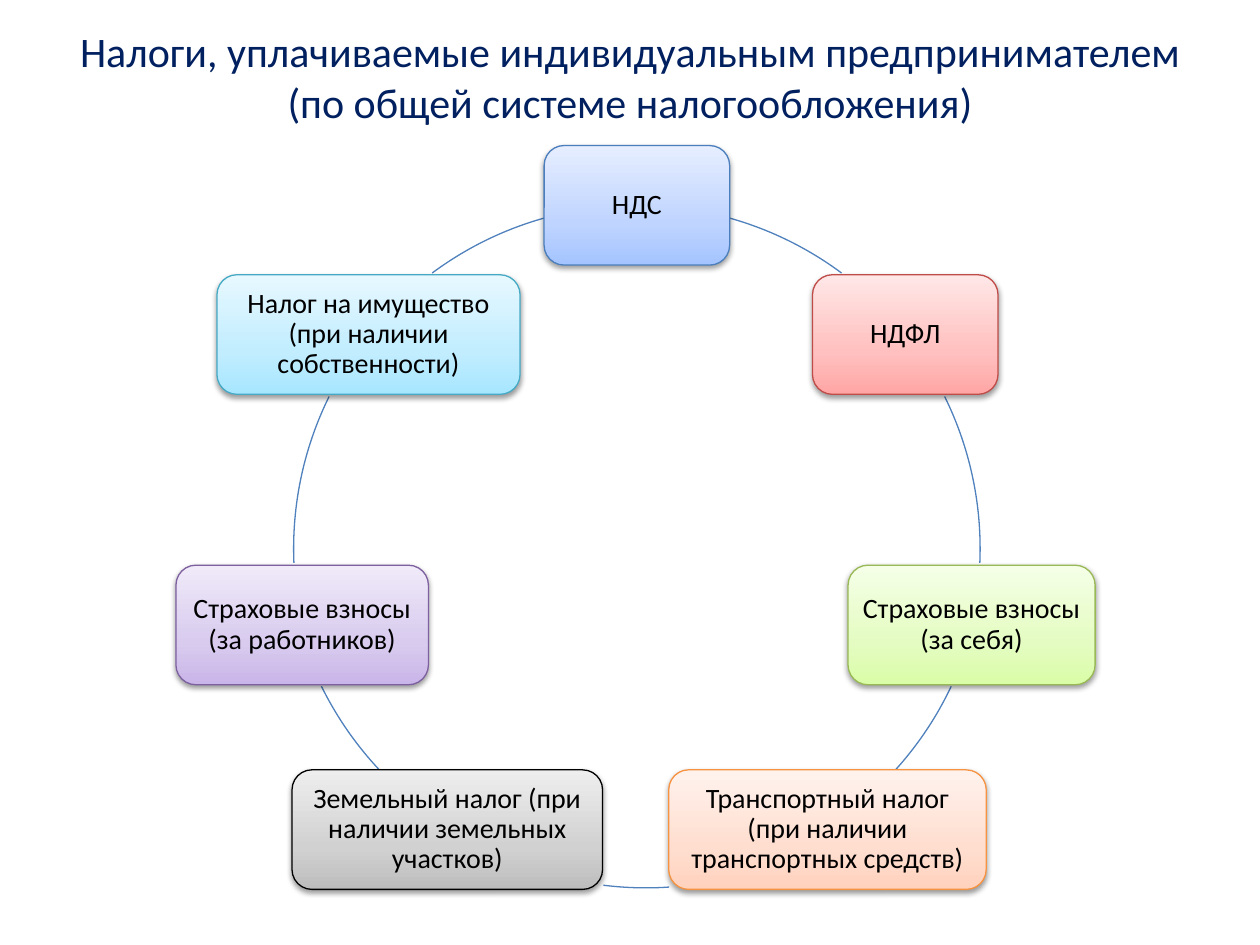
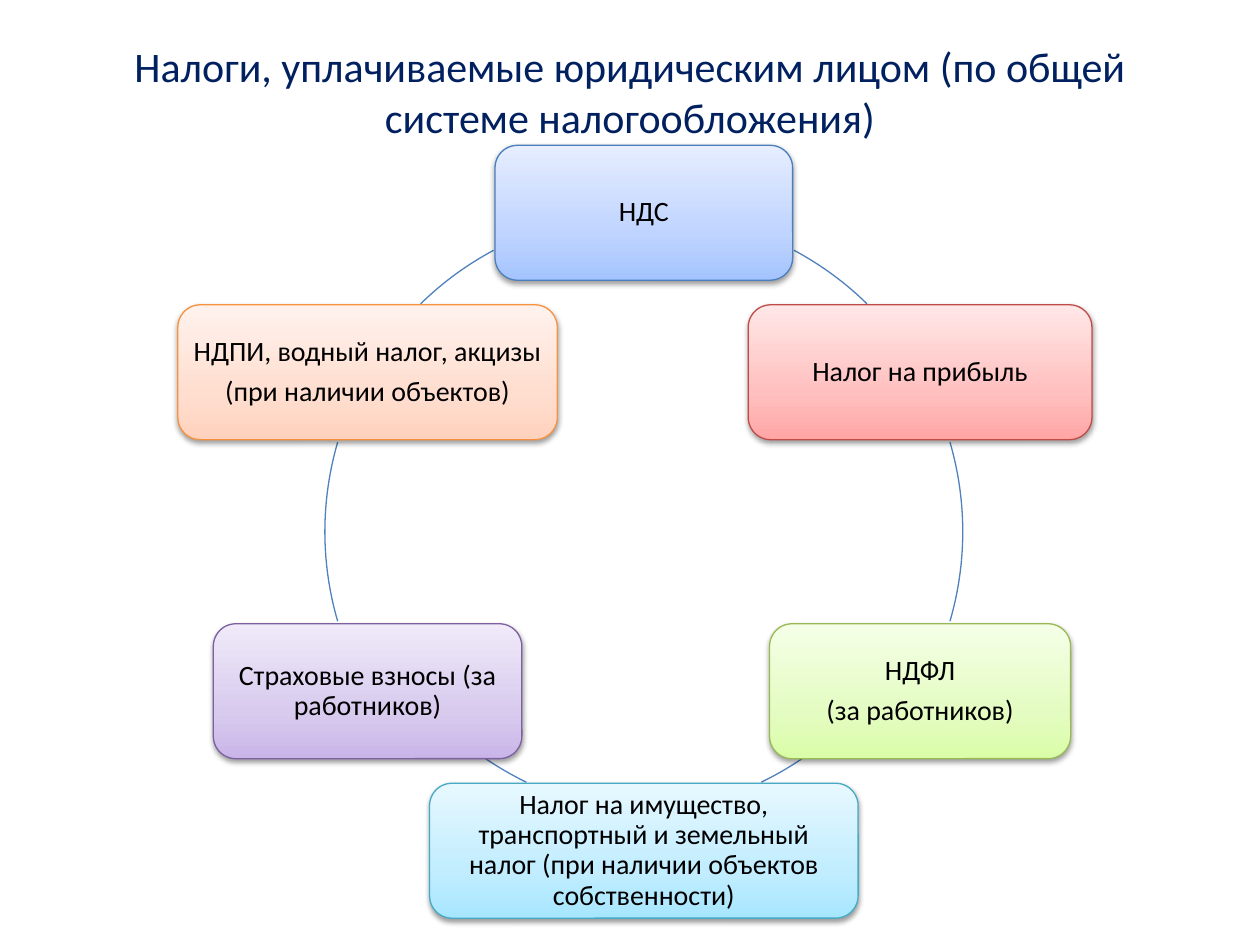
"""Build two slides that show the taxes of a sole trader and of a company as rings."""
from copy import deepcopy
from math import cos, radians, sin

from pptx import Presentation
from pptx.dml.color import RGBColor
from pptx.enum.shapes import MSO_SHAPE
from pptx.enum.text import MSO_ANCHOR, MSO_AUTO_SIZE, PP_ALIGN
from pptx.oxml import parse_xml
from pptx.oxml.ns import nsdecls, qn
from pptx.util import Cm, Pt

theme = {
    "font": "Calibri",
    "head": {"size": 24, "color": "002060"},
    "body": {"size": 16, "color": "000000"},
    "ring": "4F81BD",
    "line": 0.75,
    "blue": ("4B7EBC", "A4C4FF", "BFD4FF", "E6EEFF"),
    "red": ("BF4C48", "FFA6A5", "FFC0BF", "FFE7E7"),
    "green": ("98B955", "DAFDA7", "E4FCC2", "F5FFE7"),
    "orange": ("F69240", "FFD2BD", "FFDED0", "FFF2ED"),
    "gray": ("000000", "BDBDBD", "D1D1D1", "EEEEEE"),
    "violet": ("7D60A0", "C9B5E8", "D8CBEE", "F0EAF9"),
    "aqua": ("46AAC5", "A7E6FF", "C1EDFF", "E7F8FF"),
}
shade = (
    f'<a:outerShdw {nsdecls("a")} blurRad="40000" dist="20000" dir="5400000" '
    'rotWithShape="0"><a:srgbClr val="000000"><a:alpha val="38000"/></a:srgbClr></a:outerShdw>'
)

slides = [
    {
        "title": "Налоги, уплачиваемые индивидуальным предпринимателем "
                 "(по общей системе налогообложения)",
        "depth": 1.55, "mid": (12.84, 11.06), "radius": 6.92, "height": 2.41,
        "taxes": [
            ("НДС", "blue", 3.74, 0, 0),
            ("НДФЛ", "red", 3.74, 0, 0),
            ("Страховые взносы (за себя)", "green", 4.98, 0, 0),
            ("Транспортный налог (при наличии транспортных средств)", "orange", 6.4, 0.84, -0.57),
            ("Земельный налог (при наличии земельных участков)", "gray", 6.26, -0.82, -0.57),
            ("Страховые взносы (за работников)", "violet", 5.09, 0, 0),
            ("Налог на имущество (при наличии собственности)", "aqua", 6.11, 0, 0),
        ],
        "arcs": [
            (285.7, 306.6, 0, 0),
            (333.7, 2.4, 0, 0),
            (25.3, 42, 0.08, -0.18),
            (86.1, 97.1, 0.18, -0.08),
            (136.8, 153.8, -0.15, -0.28),
            (177.6, 206.3, 0, 0),
            (233.4, 254.3, 0, 0),
        ],
    },
    {
        "title": "Налоги, уплачиваемые юридическим лицом (по общей системе налогообложения)",
        "depth": 2.16, "mid": (12.98, 10.72), "radius": 6.43, "height": 2.72,
        "taxes": [
            ("НДС", "blue", 6, 0, 0),
            ("Налог на прибыль", "red", 6.93, 0, 0),
            ("НДФЛ\n(за работников)", "green", 6.07, 0, 0),
            ("Налог на имущество, транспортный и земельный налог "
             "(при наличии объектов собственности)", "aqua", 8.64, 0, 0),
            ("Страховые взносы (за работников)", "violet", 6.22, 0, 0),
            ("НДПИ, водный налог, акцизы\n(при наличии объектов)", "orange", 7.65, 0, 0),
        ],
        "arcs": [
            (298.1, 314.4, 0, 0),
            (343.7, 16.3, 0, 0),
            (55.7, 64.2, -0.43, -0.74),
            (115.8, 124.3, 0.43, -0.74),
            (163.7, 196.3, 0, 0),
            (225.6, 241.9, 0, 0),
        ],
    },
]


def write(shape, text, *, size, color, inset=None, space=None, after=None):
    """Fill a shape with centred text, one paragraph a line."""
    frame = shape.text_frame
    frame.text = text
    frame.word_wrap = True
    frame.auto_size = MSO_AUTO_SIZE.NONE
    frame.vertical_anchor = MSO_ANCHOR.MIDDLE
    if inset is not None:
        frame.margin_left = frame.margin_right = Cm(inset)
        frame.margin_top = frame.margin_bottom = Cm(inset)
    for para in frame.paragraphs:
        para.alignment = PP_ALIGN.CENTER
        if space is not None:
            para.line_spacing = space
        if after is not None:
            para.space_after = Pt(after)
        for run in para.runs:
            run.font.name = theme["font"]
            run.font.size = Pt(size)
            run.font.color.rgb = RGBColor.from_string(color)


def add(slide, kind, mid, width, height, edge):
    """Add a preset shape centred on a point, with a thin edge."""
    left, top = mid[0] - width / 2, mid[1] - height / 2
    shape = slide.shapes.add_shape(kind, Cm(left), Cm(top), Cm(width), Cm(height))
    shape.shadow.inherit = False
    shape.line.color.rgb = RGBColor.from_string(edge)
    shape.line.width = Pt(theme["line"])
    return shape


deck = Presentation()
deck.slide_width, deck.slide_height = Cm(25.4), Cm(19.05)

for page in slides:
    slide = deck.slides.add_slide(deck.slide_layouts[5])
    title = slide.shapes.title
    title.left, title.top = Cm(1.27), Cm(0.76)
    title.width, title.height = Cm(22.86), Cm(page["depth"])
    write(title, page["title"], **theme["head"])

    x, y = page["mid"]
    radius = page["radius"]
    for start, end, dx, dy in page["arcs"]:
        arc = add(slide, MSO_SHAPE.ARC, (x + dx, y + dy), 2 * radius, 2 * radius, theme["ring"])
        arc.fill.background()
        arc.adjustments[0], arc.adjustments[1] = start * 0.6, end * 0.6

    step = radians(360 / len(page["taxes"]))
    for i, (text, tint, width, dx, dy) in enumerate(page["taxes"]):
        mid = x + radius * sin(i * step) + dx, y - radius * cos(i * step) + dy
        edge, *tones = theme[tint]
        box = add(slide, MSO_SHAPE.ROUNDED_RECTANGLE, mid, width, page["height"], edge)
        box.fill.gradient()
        box.fill.gradient_angle = 90
        props = box._element.spPr
        stops = props.find(".//" + qn("a:gsLst"))
        stops.append(deepcopy(stops[-1]))
        for stop, tone, place in zip(box.fill.gradient_stops, tones, (0, 0.35, 1)):
            stop.color.rgb = RGBColor.from_string(tone)
            stop.position = place
        props.find(qn("a:effectLst")).append(parse_xml(shade))
        write(box, text, inset=0.17, space=0.9, after=5.6, **theme["body"])

deck.save("out.pptx")
